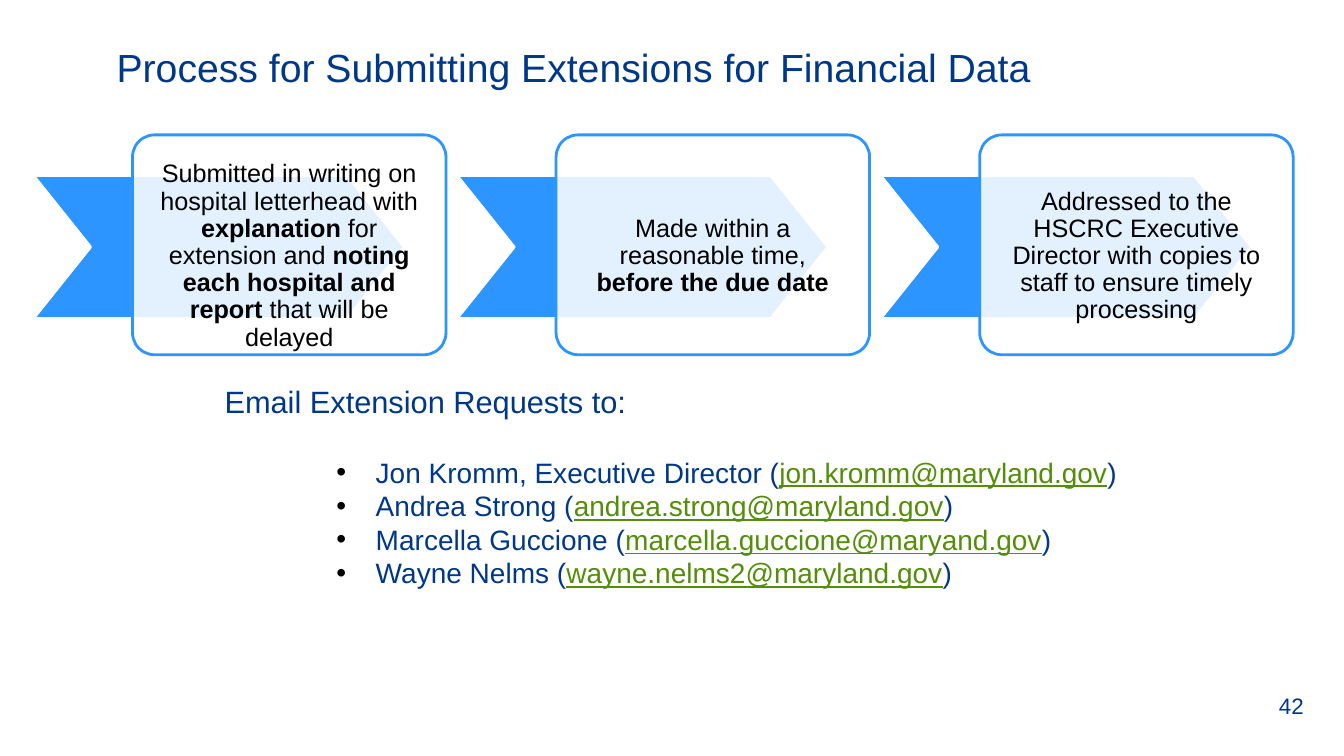
from dataclasses import dataclass

from lxml import etree
from pptx import Presentation
from pptx.dml.color import RGBColor
from pptx.enum.shapes import MSO_SHAPE
from pptx.enum.text import MSO_ANCHOR, PP_ALIGN
from pptx.oxml.ns import qn
from pptx.util import Cm, Pt

CHEVRON, ROUNDED = MSO_SHAPE.CHEVRON, MSO_SHAPE.ROUNDED_RECTANGLE
TOP, MIDDLE = MSO_ANCHOR.TOP, MSO_ANCHOR.MIDDLE
CENTER = PP_ALIGN.CENTER


@dataclass(frozen=True)
class Theme:
    font: str = "Arial"
    navy: str = "003889"
    blue: str = "2D95FF"
    white: str = "FFFFFF"
    black: str = "000000"
    green: str = "538E09"
    title: int = 28
    heading: int = 22
    contact: int = 20
    step: int = 18
    number: int = 16


THEME = Theme()

# Each step is a list of paragraphs; each paragraph is a list of (text, bold).
STEPS = [
    [[("Submitted in writing on hospital letterhead with ", False),
      ("explanation", True),
      (" for extension and ", False),
      ("noting each hospital and report ", True),
      ("that will be delayed", False)]],
    [[("Made within a reasonable time,", False)],
     [("before the due date", True)]],
    [[("Addressed to the HSCRC Executive Director with copies to staff "
       "to ensure timely processing", False)]],
]

CONTACTS = [
    ("Jon Kromm, Executive Director", "jon.kromm@maryland.gov"),
    ("Andrea Strong", "andrea.strong@maryland.gov"),
    ("Marcella Guccione", "marcella.guccione@maryand.gov"),
    ("Wayne Nelms", "wayne.nelms2@maryland.gov"),
]


def style(font, size, color, bold=False, underline=False):
    font.name = THEME.font
    font.size = Pt(size)
    font.color.rgb = RGBColor.from_string(color)
    font.bold = bold
    font.underline = underline


def add_run(p, text, *args, **kwargs):
    r = p.add_run()
    r.text = text
    style(r.font, *args, **kwargs)


def add_text(s, box, text, size, anchor=TOP):
    tf = s.shapes.add_textbox(*map(Cm, box)).text_frame
    tf.word_wrap = True
    tf.vertical_anchor = anchor
    tf.text = text
    style(tf.paragraphs[0].runs[0].font, size, THEME.navy)
    return tf


def add_outlined(s, kind, box, adjustment, fill, line):
    sp = s.shapes.add_shape(kind, *map(Cm, box))
    sp.shadow.inherit = False
    sp.adjustments[0] = adjustment
    sp.fill.solid()
    sp.fill.fore_color.rgb = RGBColor.from_string(fill)
    sp.line.color.rgb = RGBColor.from_string(line)
    sp.line.width = Pt(2)
    return sp


def set_opacity(sp, percent):
    color = sp.fill._xPr.find(qn("a:solidFill"))[0]
    etree.SubElement(color, qn("a:alpha"), val=str(percent * 1000))


def add_bullet(p, left, hanging):
    pPr = p._p.get_or_add_pPr()
    pPr.set("marL", str(Cm(left)))
    pPr.set("indent", str(-Cm(hanging)))
    color = etree.SubElement(pPr, qn("a:buClr"))
    etree.SubElement(color, qn("a:srgbClr"), val=THEME.black)
    etree.SubElement(pPr, qn("a:buFont"), typeface=THEME.font)
    etree.SubElement(pPr, qn("a:buChar"), char="•")


def add_step(s, box, paragraphs):
    """Chevron at the left with a translucent text card over its right part."""
    x, y, w, h = box
    add_outlined(s, CHEVRON, (x, y + 1.02, 9.35, 3.61), 0.4,
                 THEME.blue, THEME.white)
    card = add_outlined(s, ROUNDED, (x + 2.5, y, w - 2.5, h), 0.1,
                        THEME.white, THEME.blue)
    set_opacity(card, 87)
    tf = card.text_frame
    tf.word_wrap = True
    tf.vertical_anchor = MIDDLE
    tf.margin_left = tf.margin_right = tf.margin_bottom = Cm(0.3)
    tf.margin_top = Cm(0.88)
    for i, runs in enumerate(paragraphs):
        p = tf.add_paragraph() if i else tf.paragraphs[0]
        p.alignment = CENTER
        p.line_spacing = 0.9
        for text, bold in runs:
            add_run(p, text, THEME.step, THEME.black, bold=bold)


def add_process(s, box, steps):
    x, y, w, h = box
    step_w = 10.4
    pitch = (w - step_w) / (len(steps) - 1)
    for i, paragraphs in enumerate(steps):
        add_step(s, (x + i * pitch, y, step_w, h), paragraphs)


def add_contacts(s, box, heading, contacts):
    tf = add_text(s, box, heading, THEME.heading)
    for i, (name, email) in enumerate(contacts):
        p = tf.add_paragraph()
        p.level = 2
        p.space_before = Pt(0 if i else 25)
        add_bullet(p, 3.81, 0.99)
        add_run(p, f"{name} (", THEME.contact, THEME.navy)
        add_run(p, email, THEME.contact, THEME.green, underline=True)
        add_run(p, ")", THEME.contact, THEME.navy)


def main():
    prs = Presentation()
    prs.slide_width, prs.slide_height = Cm(33.87), Cm(19.05)
    s = prs.slides.add_slide(prs.slide_layouts[6])
    add_text(s, (2.69, 0.97, 29.21, 1.68),
             "Process for Submitting Extensions for Financial Data", THEME.title)
    add_process(s, (0.84, 3.4, 31.75, 5.54), STEPS)
    add_contacts(s, (5.41, 9.53, 23.77, 5.56),
                 "Email Extension Requests to:", CONTACTS)
    add_text(s, (31.98, 17.27, 1.6, 1.02), "42", THEME.number, MIDDLE)
    prs.save("out.pptx")


if __name__ == "__main__":
    main()
